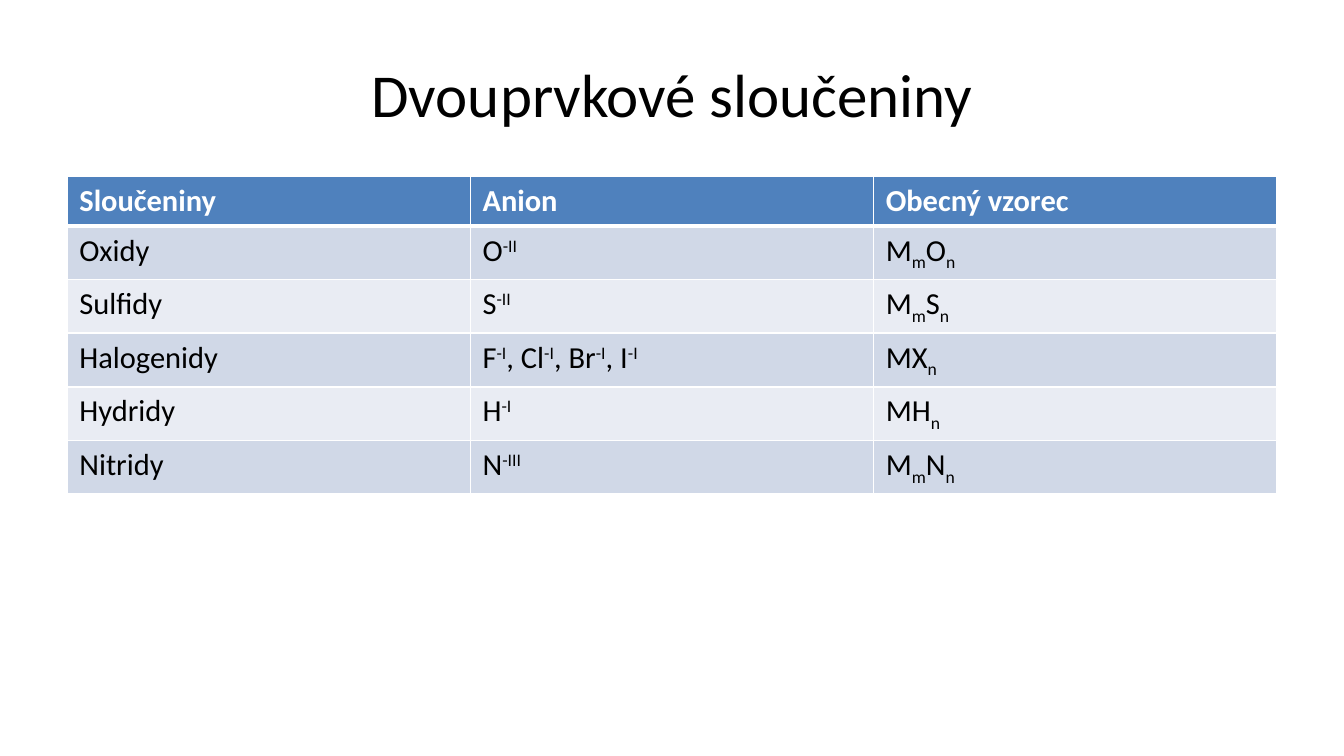
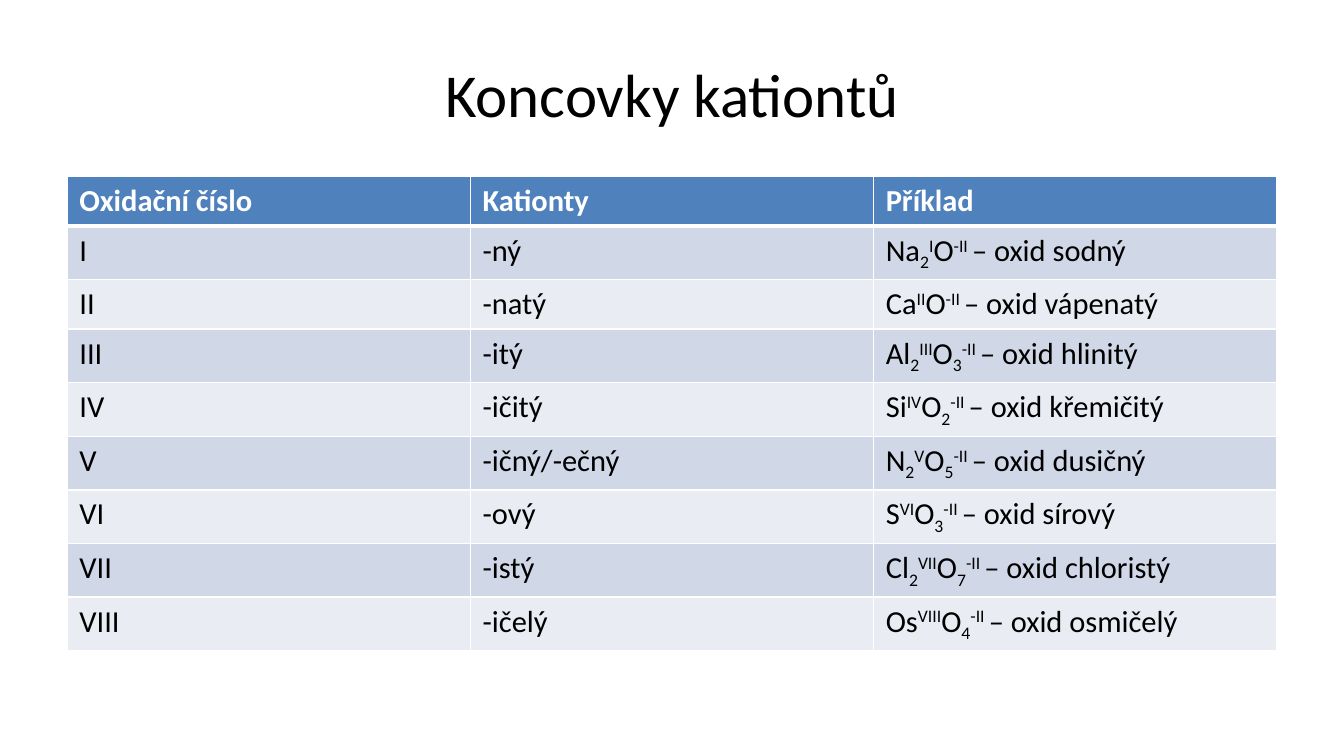
from lxml.etree import SubElement
from pptx import Presentation
from pptx.dml.color import RGBColor
from pptx.enum.text import MSO_ANCHOR, PP_ALIGN
from pptx.oxml.ns import qn
from pptx.util import Cm, Pt

# Content: "|" separates runs, a leading "^" raises a run, "_" lowers it
SLIDES = [
    ("Dvouprvkové sloučeniny", [
        ("Sloučeniny", "Anion", "Obecný vzorec"),
        ("Oxidy", "O|^-II", "M|_m|O|_n"),
        ("Sulfidy", "S|^-II", "M|_m|S|_n"),
        ("Halogenidy", "F|^-I|, Cl|^-I|, Br|^-I|, I|^-I", "MX|_n"),
        ("Hydridy", "H|^-I", "MH|_n"),
        ("Nitridy", "N|^-III", "M|_m|N|_n"),
    ]),
    ("Koncovky kationtů", [
        ("Oxidační číslo", "Kationty", "Příklad"),
        ("I", "-ný", "Na|_2|^I|O|^-II |– oxid sodný"),
        ("II", "-natý", "Ca|^II|O|^-II |– oxid vápenatý"),
        ("III", "-itý", "Al|_2|^III|O|_3|^-II |– oxid hlinitý"),
        ("IV", "-ičitý", "Si|^IV|O|_2|^-II |– oxid křemičitý"),
        ("V", "-ičný/-ečný", "N|_2|^V|O|_5|^-II |– oxid dusičný"),
        ("VI", "-ový", "S|^VI|O|_3|^-II |– oxid sírový"),
        ("VII", "-istý", "Cl|_2|^VII|O|_7|^-II |– oxid chloristý"),
        ("VIII", "-ičelý", "Os|^VIII|O|_4|^-II |– oxid osmičelý"),
    ]),
]

# Shared style
FONT = "Calibri"
BLACK = RGBColor(0x00, 0x00, 0x00)
WHITE = RGBColor(0xFF, 0xFF, 0xFF)
HEADER_BLUE = RGBColor(0x4F, 0x81, 0xBD)
BANDS = [RGBColor(0xE9, 0xEC, 0xF3), RGBColor(0xD0, 0xD8, 0xE7)]
BASELINES = {"^": "30000", "_": "-25000"}
THIN, THICK = Pt(0.96), Pt(3)

LEFT, WIDTH = Cm(1.4), Cm(25.2)
TITLE_TOP, TITLE_HEIGHT = Cm(0.63), Cm(2.62)
TABLE_TOP = Cm(3.68)
PLAIN_ROW, SUBSCRIPT_ROW = Cm(0.89), Cm(0.99)


def add_text(paragraph, text, size, color, bold=False):
    for piece in text.split("|"):
        baseline = BASELINES.get(piece[0])
        run = paragraph.add_run()
        run.text = piece[1:] if baseline else piece
        run.font.name, run.font.size = FONT, size
        run.font.bold = bold
        run.font.color.rgb = color
        if baseline:
            run.font._element.set("baseline", baseline)


def add_borders(cell, row_index):
    widths = {
        "a:lnL": THIN,
        "a:lnR": THIN,
        "a:lnT": THICK if row_index == 1 else THIN,
        "a:lnB": THICK if row_index == 0 else THIN,
    }
    properties = cell._tc.get_or_add_tcPr()
    for side, width in widths.items():
        border = SubElement(properties, qn(side), w=str(int(width)))
        fill = SubElement(border, qn("a:solidFill"))
        SubElement(fill, qn("a:srgbClr"), val=str(WHITE))


def add_title(slide, text):
    title = slide.shapes.title
    title.left, title.top = LEFT, TITLE_TOP
    title.width, title.height = WIDTH, TITLE_HEIGHT
    title.text_frame.vertical_anchor = MSO_ANCHOR.MIDDLE
    paragraph = title.text_frame.paragraphs[0]
    paragraph.alignment = PP_ALIGN.CENTER
    add_text(paragraph, text, Pt(36), BLACK)


def add_compound_table(slide, rows):
    # Rows with a subscript need more height
    heights = [SUBSCRIPT_ROW if "|_" in "".join(row) else PLAIN_ROW
               for row in rows]
    table = slide.shapes.add_table(len(rows), len(rows[0]), LEFT, TABLE_TOP,
                                   WIDTH, sum(heights)).table
    for r, (row, height) in enumerate(zip(rows, heights)):
        table.rows[r].height = height
        header = r == 0
        for c, text in enumerate(row):
            cell = table.cell(r, c)
            add_borders(cell, r)
            cell.fill.solid()
            cell.fill.fore_color.rgb = HEADER_BLUE if header else BANDS[r % 2]
            add_text(cell.text_frame.paragraphs[0], text, Pt(18),
                     WHITE if header else BLACK, bold=header)


def main():
    deck = Presentation()
    deck.slide_width, deck.slide_height = Cm(28), Cm(15.75)
    title_only = deck.slide_layouts[5]
    for title, rows in SLIDES:
        slide = deck.slides.add_slide(title_only)
        add_title(slide, title)
        add_compound_table(slide, rows)
    deck.save("out.pptx")


if __name__ == "__main__":
    main()
